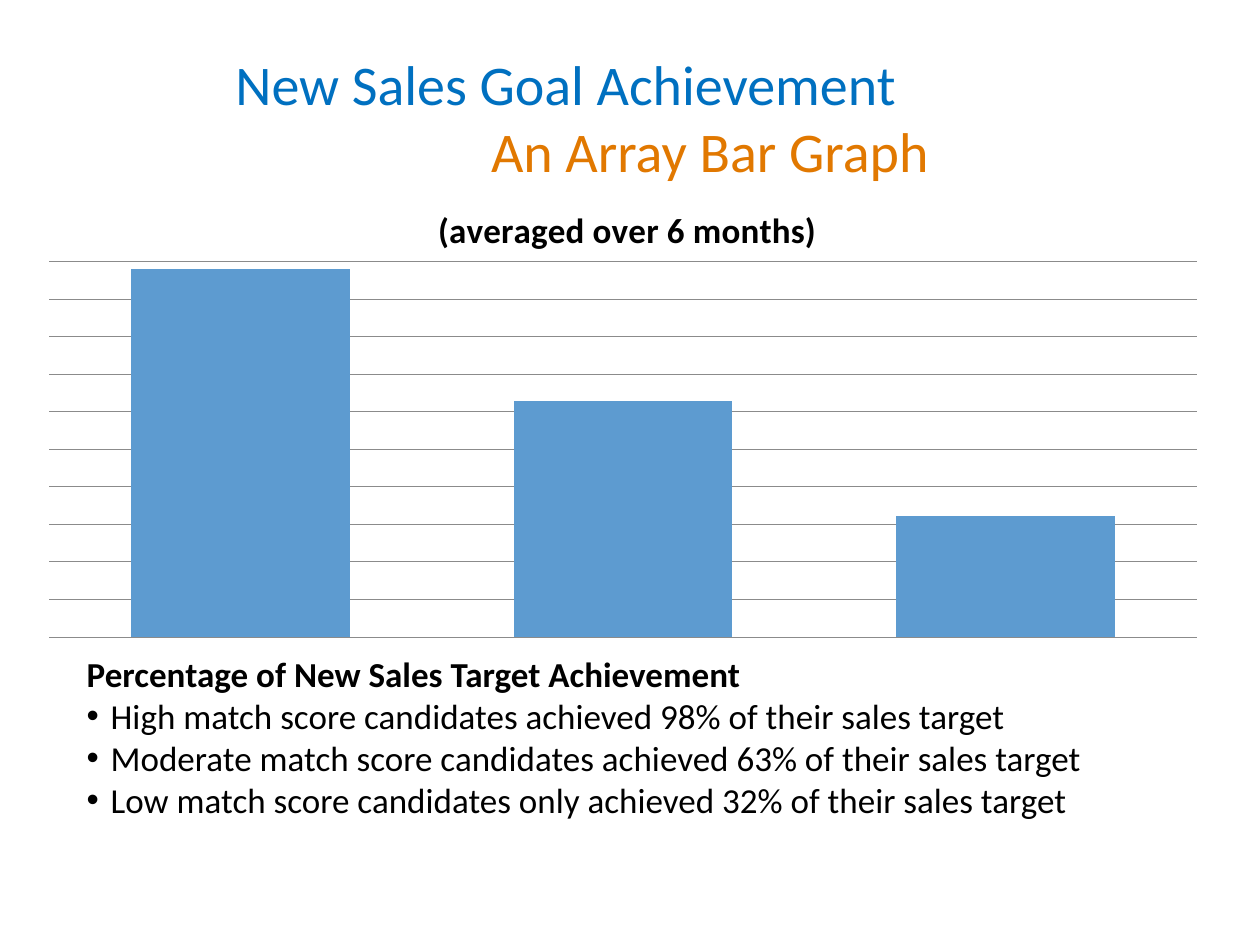
from dataclasses import dataclass
from typing import NamedTuple

from lxml.etree import SubElement
from pptx import Presentation
from pptx.chart.data import CategoryChartData
from pptx.dml.color import RGBColor
from pptx.enum.chart import XL_CHART_TYPE
from pptx.enum.text import MSO_ANCHOR, PP_ALIGN
from pptx.oxml import parse_xml
from pptx.oxml.ns import nsdecls, qn
from pptx.util import Inches, Pt


@dataclass(frozen=True)
class Theme:
    font: str = "Calibri"
    blue: str = "0070C0"
    orange: str = "E17800"
    black: str = "000000"
    white: str = "FFFFFF"
    bar: str = "5D9BD0"
    grid: str = "8B8B8B"
    title: int = 32
    body: int = 20
    axis: int = 10


class Line(NamedTuple):
    text: str
    size: int
    color: str
    bold: bool = False
    align: PP_ALIGN = PP_ALIGN.LEFT
    bullet: bool = False


T = Theme()


def add_run(p, line: Line) -> None:
    r = p.add_run()
    r.text = line.text
    r.font.name = T.font
    r.font.size = Pt(line.size)
    r.font.bold = line.bold
    r.font.color.rgb = RGBColor.from_string(line.color)


def add_bullet(p) -> None:
    pPr = p._p.get_or_add_pPr()
    pPr.set("marL", str(Inches(0.19)))
    pPr.set("indent", str(-Inches(0.19)))
    SubElement(pPr, qn("a:buFont")).set("typeface", "Arial")
    SubElement(pPr, qn("a:buChar")).set("char", "•")


def add_text(s, x: float, y: float, w: float, h: float, lines: list[Line],
             anchor: MSO_ANCHOR = MSO_ANCHOR.TOP) -> None:
    tf = s.shapes.add_textbox(Inches(x), Inches(y), Inches(w), Inches(h)).text_frame
    tf.word_wrap = True
    tf.vertical_anchor = anchor
    for i, line in enumerate(lines):
        p = tf.add_paragraph() if i else tf.paragraphs[0]
        p.alignment = line.align
        if line.bullet:
            add_bullet(p)
        add_run(p, line)


def set_layout(parent, after, **fractions: float) -> None:
    """Place a chart part by fractions of the chart's size."""
    for old in parent.findall(qn("c:layout")):
        parent.remove(old)
    layout = parse_xml(f"<c:layout {nsdecls('c')}><c:manualLayout/></c:layout>")
    manual = layout[0]
    if "w" in fractions:
        SubElement(manual, qn("c:layoutTarget")).set("val", "inner")
    for name in ("xMode", "yMode"):
        SubElement(manual, qn(f"c:{name}")).set("val", "edge")
    for name, value in fractions.items():
        SubElement(manual, qn(f"c:{name}")).set("val", str(value))
    if after is None:
        parent.insert(0, layout)
    else:
        after.addnext(layout)


def add_sales_chart(s) -> None:
    data = CategoryChartData()
    data.categories = ["1", "2", "3"]
    data.add_series("Series 1", (100, 64, 33))
    chart = s.shapes.add_chart(XL_CHART_TYPE.COLUMN_STACKED, Inches(0.2), Inches(1),
                               Inches(9.49), Inches(4.14), data).chart
    chart.has_legend = False
    chart.font.name = T.font
    chart.font.size = Pt(T.axis)
    chart.font.color.rgb = RGBColor.from_string(T.black)

    # Bars
    plot = chart.plots[0]
    plot.vary_by_categories = False
    plot.gap_width = 75
    plot.overlap = 100
    fill = plot.series[0].format.fill
    fill.solid()
    fill.fore_color.rgb = RGBColor.from_string(T.bar)

    # Hidden axes, ten grid steps
    chart.category_axis.visible = False
    axis = chart.value_axis
    axis.visible = False
    axis.minimum_scale, axis.maximum_scale, axis.major_unit = 0, 102, 10.2
    axis.has_major_gridlines = True
    grid = axis.major_gridlines.format.line
    grid.width = Pt(0.5)
    grid.color.rgb = RGBColor.from_string(T.grid)

    # Title and plot position
    add_run(chart.chart_title.text_frame.paragraphs[0],
            Line("(averaged over 6 months)", T.body, T.black, bold=True))
    chart.chart_title.include_in_layout = True
    title = chart.chart_title._element
    set_layout(title, title.find(qn("c:tx")), x=0.34, y=0.14)
    for old in title.findall(qn("c:overlay")):
        title.remove(old)
    overlay = parse_xml(f'<c:overlay {nsdecls("c")} val="1"/>')
    title.find(qn("c:layout")).addnext(overlay)
    area = chart._chartSpace.chart.plotArea
    set_layout(area, None, x=0.02, y=0.26, w=0.96, h=0.72)

    # Clear chart background, white plot
    chart._chartSpace.chart.addnext(parse_xml(
        f"<c:spPr {nsdecls('c', 'a')}><a:noFill/><a:ln><a:noFill/></a:ln></c:spPr>"))
    area.append(parse_xml(
        f"<c:spPr {nsdecls('c', 'a')}><a:solidFill><a:srgbClr val=\"{T.white}\"/>"
        "</a:solidFill></c:spPr>"))


def main() -> None:
    prs = Presentation()
    prs.slide_width, prs.slide_height = Inches(10), Inches(7.5)
    s = prs.slides.add_slide(prs.slide_layouts[6])

    # Heading
    add_text(s, 1.77, 0.3, 7.73, 1.25, [
        Line("New Sales Goal Achievement", T.title, T.blue),
        Line("An Array Bar Graph", T.title, T.orange, align=PP_ALIGN.CENTER),
    ], MSO_ANCHOR.MIDDLE)

    # Findings
    results = [("High", "achieved 98%"), ("Moderate", "achieved 63%"),
               ("Low", "only achieved 32%")]
    add_text(s, 0.59, 5.13, 9, 1.7, [
        Line("Percentage of New Sales Target Achievement", T.body, T.black, bold=True),
        *(Line(f"{level} match score candidates {result} of their sales target",
               T.body, T.black, bullet=True) for level, result in results),
    ])

    add_sales_chart(s)
    prs.save("out.pptx")


if __name__ == "__main__":
    main()
